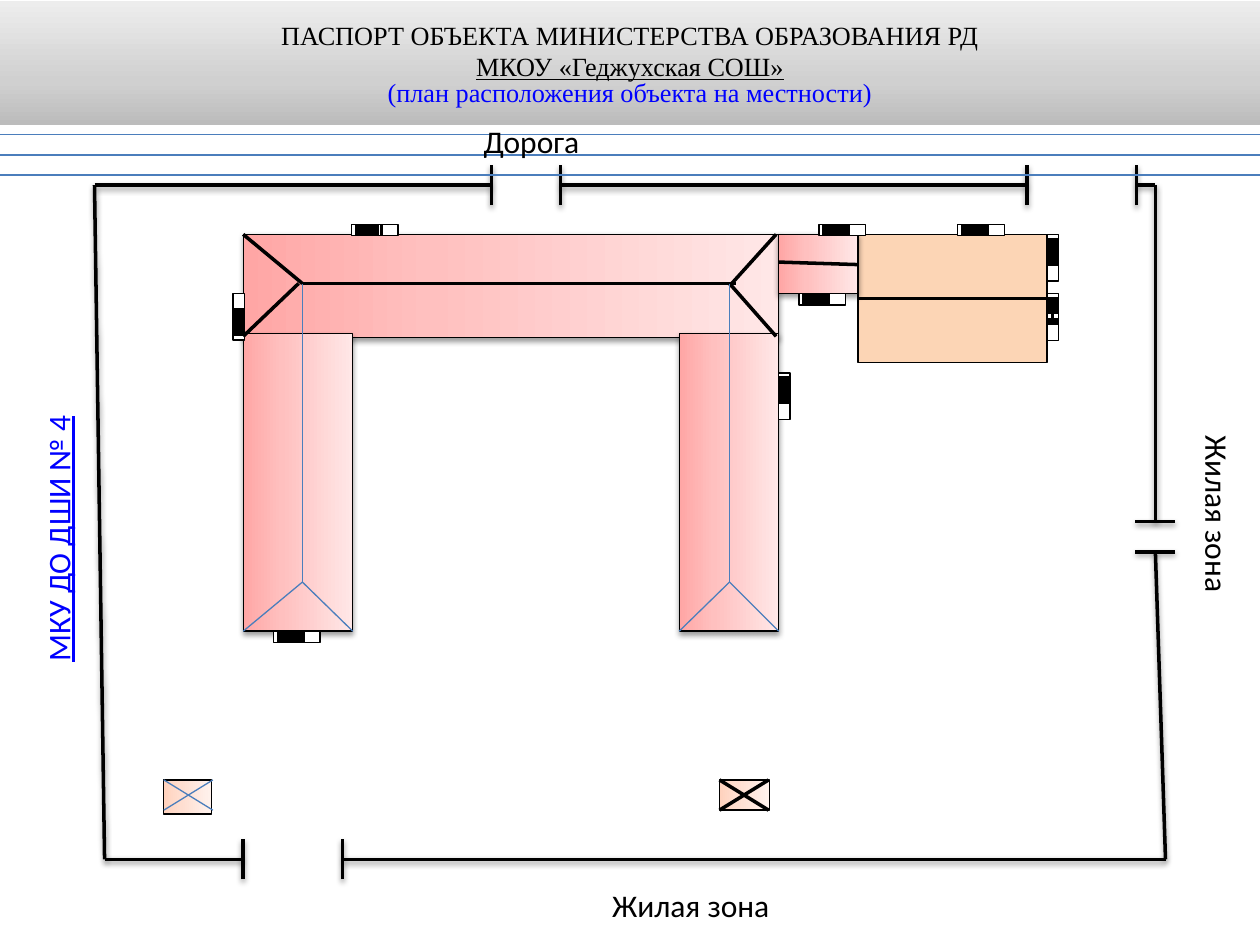
from dataclasses import dataclass
from itertools import product

from lxml import etree
from pptx import Presentation
from pptx import util as u
from pptx.dml.color import RGBColor
from pptx.enum import shapes, text
from pptx.oxml import parse_xml
from pptx.oxml.ns import nsdecls, qn

COLS, ROWS = 100, 75
BLACK, WHITE, BLUE, ROAD = "000000", "FFFFFF", "0000FF", "4B7EBC"
RED = ("FFA6A5", "FFC0BF", "FFE7E7")
PEACH = ("FFD2BD", "FFDED0", "FFF2ED")
GREY = ("BCBCBC", "D0D0D0", "EDEDED")

prs = Presentation()
prs.slide_width, prs.slide_height = u.Inches(10), u.Inches(7.5)
CELL = prs.slide_width // COLS
s = prs.slides.add_slide(prs.slide_layouts[6])


@dataclass
class Block:
    """A part of the plan as seen on the slide; turn rotates its frame."""
    x: float
    y: float
    w: float
    h: float
    fill: str | tuple[str, ...]
    turn: int = 90
    shadow: bool = False


@dataclass
class Stairs:
    x: float
    y: float
    turn: int
    crooked: int = -1  # index of the tread that lies across the others


@dataclass
class Label:
    words: str
    x: float
    y: float
    w: float
    turn: int = 0
    colour: str = BLACK
    wrap: bool = True


def cells(*lengths: float) -> list[int]:
    return [round(n * CELL) for n in lengths]


def rgb(colour: str) -> RGBColor:
    return RGBColor.from_string(colour)


def set_effect(sp, shadow: bool) -> None:
    """Give the shape a soft shadow below it, or none at all."""
    pr = sp._element.spPr
    for old in pr.findall(qn("a:effectLst")):
        pr.remove(old)
    effects = etree.SubElement(pr, qn("a:effectLst"))
    if shadow:
        effects.append(parse_xml(
            f'<a:outerShdw {nsdecls("a")} blurRad="40000" dist="20000" dir="5400000" '
            'rotWithShape="0"><a:srgbClr val="000000"><a:alpha val="38000"/>'
            '</a:srgbClr></a:outerShdw>'))


def set_fill(sp, fill: str | tuple[str, ...]) -> None:
    """Fill with one colour, or with three that run from bottom to top."""
    if isinstance(fill, str):
        sp.fill.solid()
        sp.fill.fore_color.rgb = rgb(fill)
        return
    stops = "".join(f'<a:gs pos="{pos}"><a:srgbClr val="{c}"/></a:gs>'
                    for pos, c in zip((0, 35000, 100000), fill))
    sp._element.spPr.find(qn("a:prstGeom")).addnext(parse_xml(
        f'<a:gradFill {nsdecls("a")} rotWithShape="1"><a:gsLst>{stops}</a:gsLst>'
        '<a:lin ang="16200000" scaled="0"/></a:gradFill>'))


def draw_block(b: Block, parent=s):
    w, h = (b.h, b.w) if b.turn == 90 else (b.w, b.h)
    left, top = b.x + (b.w - w) / 2, b.y + (b.h - h) / 2
    sp = parent.shapes.add_shape(shapes.MSO_SHAPE.RECTANGLE, *cells(left, top, w, h))
    sp.rotation = b.turn
    set_fill(sp, b.fill)
    sp.line.color.rgb = rgb(BLACK)
    sp.line.width = u.Pt(0)
    set_effect(sp, b.shadow)
    return sp


def draw_line(x1: float, y1: float, x2: float, y2: float, colour: str = BLACK,
              width: float = 0, shadow: bool = False, parent=s) -> None:
    ln = parent.shapes.add_connector(shapes.MSO_CONNECTOR.STRAIGHT, *cells(x1, y1, x2, y2))
    ln.line.color.rgb = rgb(colour)
    ln.line.width = u.Pt(width)
    set_effect(ln, shadow)


def draw_stairs(st: Stairs) -> None:
    length, depth, pitch, treads = 3.7, 0.9, 0.28, 8
    group = s.shapes.add_group_shape()
    flat = st.turn == 90
    w, h = (length, depth) if flat else (depth, length)
    draw_block(Block(st.x, st.y, w, h, WHITE, st.turn), group)
    first = 1.3 if st.turn == 0 else 0.4
    for i in range(treads):
        step = first + i * pitch
        if flat:
            ends = (st.x + step, st.y, st.x + step, st.y + depth)
        elif i == st.crooked:
            mid = st.x + depth / 2
            ends = (mid, st.y + step - depth / 2, mid, st.y + step + depth / 2)
        else:
            ends = (st.x, st.y + step, st.x + depth, st.y + step)
        draw_line(*ends, parent=group)


def draw_label(lb: Label) -> None:
    sp = s.shapes.add_textbox(*cells(lb.x, lb.y, lb.w, 4))
    sp.rotation = lb.turn
    tf = sp.text_frame
    tf.word_wrap = lb.wrap
    tf.auto_size = text.MSO_AUTO_SIZE.SHAPE_TO_FIT_TEXT
    p = tf.paragraphs[0]
    p.text = lb.words
    p.font.size, p.font.name = u.Pt(18), "Calibri"
    p.font.color.rgb = rgb(lb.colour)
    p.font.underline = lb.colour == BLUE


def draw_header() -> None:
    sp = draw_block(Block(0, 0.1, COLS, 9.8, GREY, 0))
    sp.line.fill.background()
    tf = sp.text_frame
    tf.word_wrap = True
    tf.vertical_anchor = text.MSO_ANCHOR.MIDDLE
    lines = (("ПАСПОРТ ОБЪЕКТА МИНИСТЕРСТВА ОБРАЗОВАНИЯ РД", BLACK, False, 1.0),
             ("МКОУ «Геджухская СОШ»", BLACK, True, 1.0),
             ("(план расположения объекта на местности)", BLUE, False, 0.8))
    for i, (words, colour, underline, spacing) in enumerate(lines):
        p = tf.add_paragraph() if i else tf.paragraphs[0]
        p.text, p.alignment, p.line_spacing = words, text.PP_ALIGN.CENTER, spacing
        p.font.size, p.font.name, p.font.underline = u.Pt(15), "Times New Roman", underline
        p.font.color.rgb = rgb(colour)


BLOCKS = [
    Block(13, 61.9, 3.8, 2.7, PEACH), Block(68.1, 18.6, 15, 10.2, "FCD5B5"),
    Block(57.1, 61.9, 4, 2.4, PEACH), Block(19.3, 18.6, 42.5, 8.2, RED, shadow=True),
    Block(19.3, 26.5, 8.7, 23.6, RED, shadow=True),
    Block(61.8, 18.6, 6.3, 4.7, RED, shadow=True),
    Block(53.9, 26.5, 7.9, 23.6, RED, shadow=True),
]
STAIRS = [
    Stairs(61.8, 29.6, 180), Stairs(18.5, 23.3, 0), Stairs(65, 17.8, 90),
    Stairs(27.9, 17.8, 90), Stairs(63.4, 23.3, 90), Stairs(21.7, 50.1, 90),
    Stairs(83.1, 18.6, 180), Stairs(76, 17.8, 90), Stairs(83.1, 23.3, 180, crooked=5),
]
ROOF = [
    (58.4, 22.5, 24, 22.5), (61.6, 26.7, 57.9, 22.5), (61.6, 18.6, 57.9, 22.7),
    (23.7, 22.5, 19.3, 26.7), (24, 22.5, 19.3, 18.6), (61.8, 20.8, 68.1, 21),
    (68.1, 23.7, 83.1, 23.7), (61, 64.3, 57.1, 61.9), (61, 61.9, 57.1, 64.3),
]
BLUE_ROOF = [(13, 61.9, 16.9, 64.3), (13, 64.3, 16.9, 61.9)]
for ridge, eave_left, eave_right in ((24, 19.3, 28), (57.9, 53.9, 61.8)):
    BLUE_ROOF += [(ridge, 22.5, ridge, 46.2), (ridge, 46.2, eave_left, 50.1),
                  (ridge, 46.2, eave_right, 50.1)]
FENCE = [
    (44.5, 14.7, 81.5, 14.7), (7.5, 14.7, 39, 14.7), (7.5, 14.7, 8.3, 68.2),
    (8.3, 68.2, 19.3, 68.2), (27.2, 68.2, 92.5, 68.2), (91.7, 43.8, 92.5, 68.2),
    (91.7, 14.7, 91.7, 41.4), (90.2, 14.7, 91.7, 14.7),
]
GATE = 1.58  # half the length of a gate post
POSTS = [*product((39, 44.5, 81.5, 90.2), (14.7,)), *product((19.3, 27.2), (68.2,))]
FENCE += [(x, y + GATE, x, y - GATE) for x, y in POSTS]
FENCE += [(91.7 - GATE, y, 91.7 + GATE, y) for y in (41.4, 43.8)]
LABELS = [
    Label("Дорога", 37.4, 9.2, 15.7), Label("Жилая зона", 47.6, 69.8, 14.6, wrap=False),
    Label("Жилая зона", 88.4, 39.8, 16.5, 90),
    Label("МКУ ДО ДШИ № 4", -6.3, 40.6, 21.8, 270, BLUE),
]

for block in BLOCKS:
    draw_block(block)
for stairs in STAIRS:
    draw_stairs(stairs)
for edge in ROOF:
    draw_line(*edge)
draw_header()
for edge in BLUE_ROOF:
    draw_line(*edge, ROAD, 0.75)
for edge in FENCE:
    draw_line(*edge, BLACK, 2, shadow=True)
for y in (13.9, 12.3, 10.7):
    draw_line(0, y, COLS, y, ROAD, 0.75)
for label in LABELS:
    draw_label(label)

prs.save("out.pptx")
